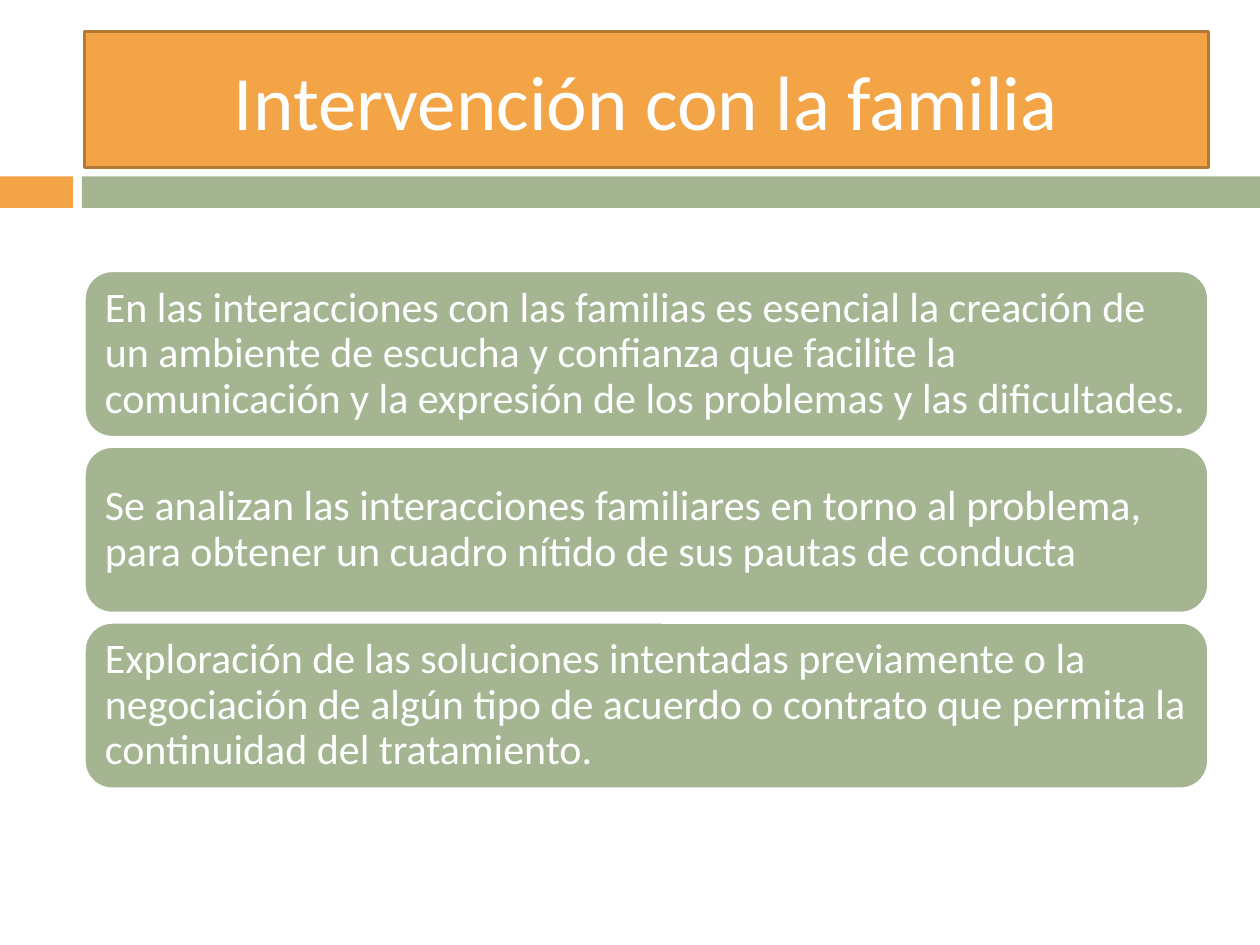
from pptx import Presentation
from pptx.dml.color import RGBColor
from pptx.enum.shapes import MSO_SHAPE
from pptx.enum.text import MSO_ANCHOR, MSO_AUTO_SIZE, PP_ALIGN
from pptx.util import Pt

COLORS = {
    "orange": "F3A447",
    "dark_orange": "B47935",
    "green": "A5B592",
    "white": "FFFFFF",
}
BAR_TOP, BAR_HEIGHT = 100.8, 18
BARS = [(0, 41.76, "orange"), (46.8, 673.2, "green")]
CONTENT_LEFT, CONTENT_WIDTH = 48.24, 642.24
CARD_TOP, CARD_HEIGHT, CARD_PITCH = 154.8, 95.04, 100.44
CARD_TEXTS = [
    "En las interacciones con las familias es esencial la creación de un ambiente "
    "de escucha y confianza que facilite la comunicación y la expresión de los "
    "problemas y las dificultades.",
    "Se analizan las interacciones familiares en torno al problema, para obtener "
    "un cuadro nítido de sus pautas de conducta",
    "Exploración de las soluciones intentadas previamente o la negociación de algún "
    "tipo de acuerdo o contrato que permita la continuidad del tratamiento.",
]


def paint(shape, fill, line=None):
    shape.fill.solid()
    shape.fill.fore_color.rgb = RGBColor.from_string(COLORS[fill])
    if line:
        shape.line.color.rgb = RGBColor.from_string(COLORS[line])
        shape.line.width = Pt(1.5)
    else:
        shape.line.fill.background()


def write(shape, text, size, alignment):
    """Set one white paragraph, centred vertically in the shape."""
    frame = shape.text_frame
    frame.text = text
    frame.word_wrap = True
    frame.auto_size = MSO_AUTO_SIZE.NONE
    frame.vertical_anchor = MSO_ANCHOR.MIDDLE
    paragraph = frame.paragraphs[0]
    paragraph.alignment = alignment
    font = paragraph.runs[0].font
    font.name = "Calibri"
    font.size = Pt(size)
    font.color.rgb = RGBColor.from_string(COLORS["white"])


presentation = Presentation()
presentation.slide_width = Pt(720)
presentation.slide_height = Pt(540)
slide = presentation.slides.add_slide(presentation.slide_layouts[5])

title = slide.shapes.title
title.left, title.top = Pt(CONTENT_LEFT), Pt(18)
title.width, title.height = Pt(CONTENT_WIDTH), Pt(77.76)
paint(title, "orange", "dark_orange")
write(title, "Intervención con la familia", 44, PP_ALIGN.CENTER)

for left, width, color in BARS:
    bar = slide.shapes.add_shape(
        MSO_SHAPE.RECTANGLE, Pt(left), Pt(BAR_TOP), Pt(width), Pt(BAR_HEIGHT)
    )
    bar.shadow.inherit = False
    paint(bar, color)

for index, text in enumerate(CARD_TEXTS):
    card = slide.shapes.add_shape(
        MSO_SHAPE.ROUNDED_RECTANGLE,
        Pt(CONTENT_LEFT), Pt(CARD_TOP + index * CARD_PITCH),
        Pt(CONTENT_WIDTH), Pt(CARD_HEIGHT),
    )
    card.shadow.inherit = False
    paint(card, "green", "white")
    write(card, text, 24, PP_ALIGN.LEFT)
    frame = card.text_frame
    frame.margin_left = frame.margin_right = Pt(7.2)
    frame.margin_top = frame.margin_bottom = Pt(7.2)
    frame.paragraphs[0].line_spacing = 0.9

presentation.save("out.pptx")
